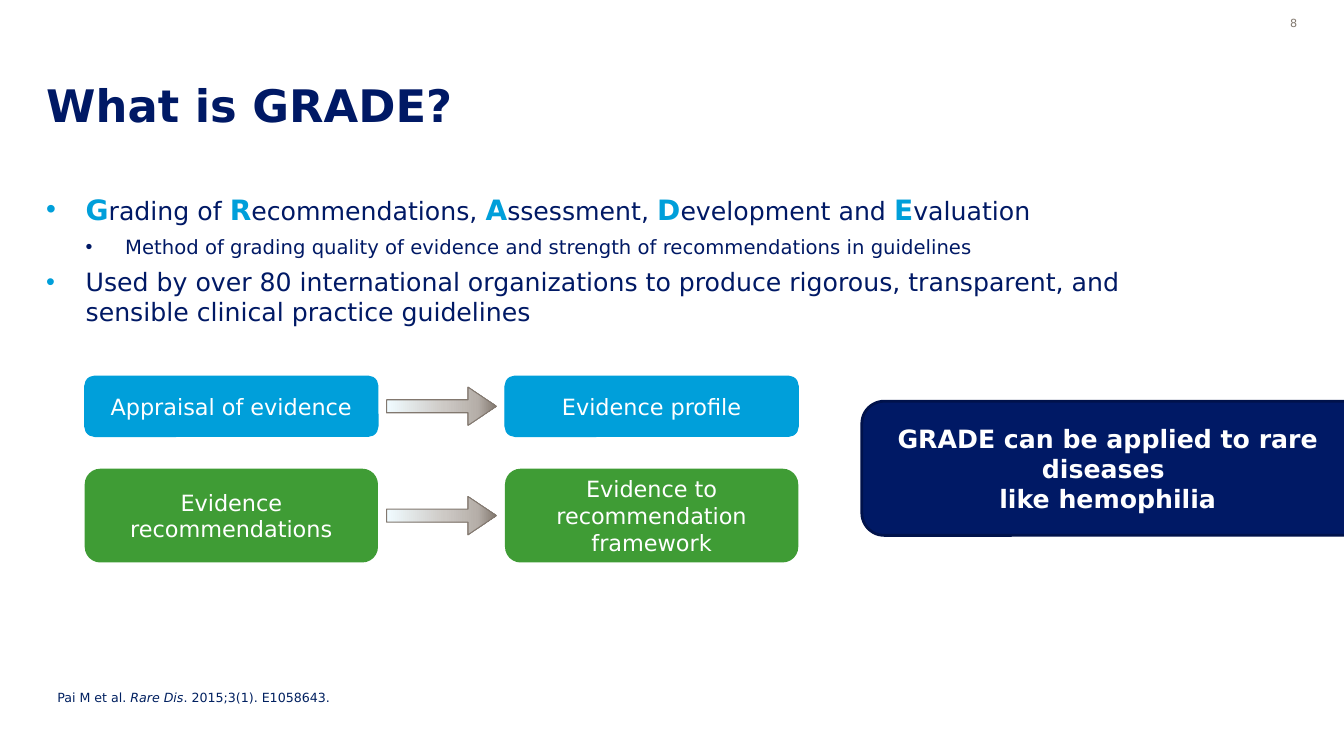
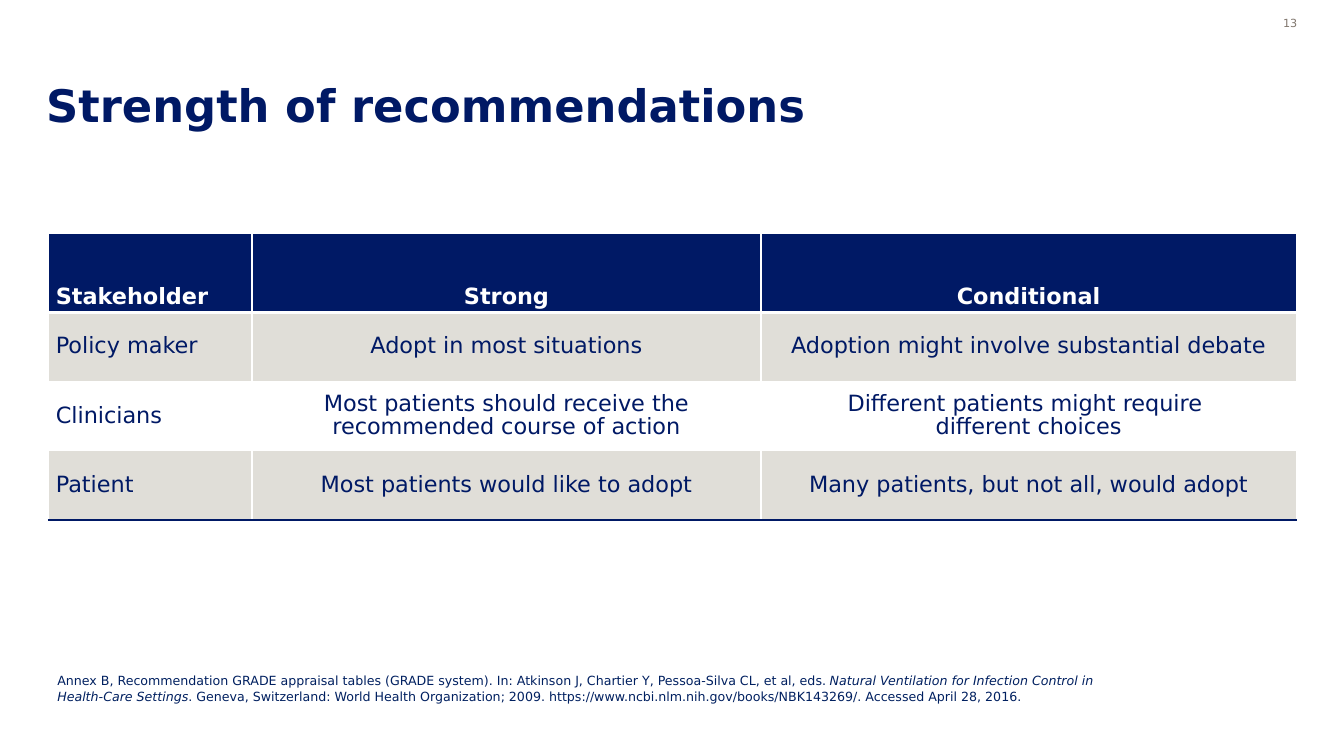
from dataclasses import dataclass

from lxml import etree
from pptx import Presentation, util as u
from pptx.dml.color import RGBColor
from pptx.enum import shapes as sh, text as tx
from pptx.oxml import ns


# Theme: colours and type sizes
@dataclass(frozen=True)
class Theme:
    font: str = "DejaVu Sans"
    navy: str = "001965"
    edge: str = "00124B"
    note: str = "002060"
    sky: str = "009FDA"
    green: str = "3F9C35"
    gray: str = "82786F"
    sand: str = "E0DED8"
    white: str = "FFFFFF"
    fade: tuple = ((0, "F0FBFF"), (53, "CDC9C5"), (83, "B5AEA8"), (100, "82786F"))
    head: int = 32
    big: int = 20
    body: int = 18
    cell: int = 16
    sub: int = 14
    small: int = 9
    tiny: int = 8


T = Theme()
LEFT, MID, RIGHT = tx.PP_ALIGN.LEFT, tx.PP_ALIGN.CENTER, tx.PP_ALIGN.RIGHT


# Text and XML helpers
def rgb(code):
    return RGBColor.from_string(code)


def write(par, words, size=T.body, color=T.navy, bold=False, italic=False,
          align=LEFT, before=0, lines=None):
    """Fill a paragraph; words is a string or a list of (string, format) runs."""
    par.alignment = align
    par.space_before = u.Pt(before)
    if lines:
        par.line_spacing = lines
    base = dict(size=size, color=color, bold=bold, italic=italic)
    for part, own in [(words, {})] if isinstance(words, str) else words:
        look = {**base, **own}
        for n, line in enumerate(part.split("\n")):
            if n:
                par.add_line_break()
            run = par.add_run()
            run.text = line
            font = run.font
            font.name, font.size = T.font, u.Pt(look["size"])
            font.bold, font.italic = look["bold"], look["italic"]
            font.color.rgb = rgb(look["color"])


def node(root, tag, **attrs):
    return etree.SubElement(root, ns.qn(tag), {k: str(v) for k, v in attrs.items()})


def bullet(par, color, left, hang):
    props = par._p.get_or_add_pPr()
    props.set("marL", str(u.Pt(left)))
    props.set("indent", str(-u.Pt(hang)))
    node(node(props, "a:buClr"), "a:srgbClr", val=color)
    node(props, "a:buFont", typeface="Arial")
    node(props, "a:buChar", char="•")


def border(cell, sides):
    """Draw (tag, colour, width) sides, which must precede the cell's fill."""
    props = cell._tc.get_or_add_tcPr()
    for n, (tag, color, width) in enumerate(sides):
        line = node(props, tag, w=u.Pt(width))
        node(node(line, "a:solidFill"), "a:srgbClr", val=color)
        props.insert(n, line)


def inset(frame, left=0, top=0, right=0, bottom=0):
    frame.margin_left, frame.margin_top = u.Pt(left), u.Pt(top)
    frame.margin_right, frame.margin_bottom = u.Pt(right), u.Pt(bottom)


class Deck:
    """Holds the style and the current slide."""

    def __init__(self):
        self.prs = Presentation()
        self.prs.slide_width, self.prs.slide_height = u.Pt(960), u.Pt(540)

    def start(self, title, page, layout):
        """Add a slide with its title and page number."""
        self.slide = self.prs.slides.add_slide(self.prs.slide_layouts[layout])
        frame = self.place(self.slide.shapes.title, 33, 54, 893.5, 41)
        frame.vertical_anchor = tx.MSO_ANCHOR.MIDDLE
        write(frame.paragraphs[0], title, size=T.head, bold=True)
        frame = self.label(894.25, 10.8, 32.4, 10.8)
        inset(frame)
        frame.vertical_anchor = tx.MSO_ANCHOR.MIDDLE
        write(frame.paragraphs[0], page, size=T.tiny, color=T.gray, align=RIGHT)

    def place(self, holder, x, y, w, h):
        holder.left, holder.top = u.Pt(x), u.Pt(y)
        holder.width, holder.height = u.Pt(w), u.Pt(h)
        frame = holder.text_frame
        frame.auto_size = tx.MSO_AUTO_SIZE.NONE
        inset(frame)
        return frame

    def label(self, x, y, w, h):
        box = self.slide.shapes.add_textbox(u.Pt(x), u.Pt(y), u.Pt(w), u.Pt(h))
        box.text_frame.word_wrap = True
        return box.text_frame

    def source(self, words, y, w, h):
        frame = self.label(33.85, y, w, h)
        frame.auto_size = tx.MSO_AUTO_SIZE.SHAPE_TO_FIT_TEXT
        write(frame.paragraphs[0], words, size=T.small, color=T.note)

    def points(self, items):
        """Fill the body placeholder with (level, words) bullets."""
        frame = self.place(self.slide.placeholders[1], 33, 137.5, 860.5, 310)
        frame.margin_right = u.Pt(17.3)
        for n, (level, words) in enumerate(items):
            par = frame.add_paragraph() if n else frame.paragraphs[0]
            par.level = level
            write(par, words, size=T.sub if level else T.body, before=6)
            bullet(par, T.navy if level else T.sky, 28.2 * (level + 1), 28.2)

    def shape(self, kind, x, y, w, h, edge=None, width=0.75):
        shape = self.slide.shapes.add_shape(kind, u.Pt(x), u.Pt(y), u.Pt(w), u.Pt(h))
        shape.shadow.inherit = False
        if edge:
            shape.line.color.rgb = rgb(edge)
            shape.line.width = u.Pt(width)
        else:
            shape.line.fill.background()
        return shape

    def box(self, words, x, y, w, h, fill, size=T.cell, bold=False, **line):
        shape = self.shape(sh.MSO_SHAPE.ROUNDED_RECTANGLE, x, y, w, h, **line)
        shape.fill.solid()
        shape.fill.fore_color.rgb = rgb(fill)
        frame = shape.text_frame
        frame.word_wrap = True
        frame.vertical_anchor = tx.MSO_ANCHOR.MIDDLE
        write(frame.paragraphs[0], words, size=size, color=T.white, bold=bold, align=MID)
        return frame

    def arrow(self, x, y, w, h):
        shape = self.shape(sh.MSO_SHAPE.RIGHT_ARROW, x, y, w, h, edge=T.gray)
        shape.adjustments[0], shape.adjustments[1] = 0.34, 0.74
        shape.fill.gradient()
        shape.fill.gradient_angle = 0
        stops = shape._element.spPr.find(".//" + ns.qn("a:gsLst"))
        for old in list(stops):
            stops.remove(old)
        for pos, color in T.fade:
            node(node(stops, "a:gs", pos=pos * 1000), "a:srgbClr", val=color)

    def table(self, rows, x, y, widths, heights):
        grid = self.slide.shapes.add_table(
            len(rows), len(widths), u.Pt(x), u.Pt(y),
            u.Pt(sum(widths)), u.Pt(sum(heights))).table
        for col, width in zip(grid.columns, widths):
            col.width = u.Pt(width)
        # Rules above, between and below the rows
        rules = [(T.white, 1), (T.white, 3), (T.white, 1), (T.white, 1), (T.navy, 1.5)]
        for r, row in enumerate(rows):
            grid.rows[r].height = u.Pt(heights[r])
            top = r == 0
            for c, words in enumerate(row):
                cell = grid.cell(r, c)
                inset(cell, 5.3, 2.65, 5.3, 2.65)
                cell.vertical_anchor = tx.MSO_ANCHOR.BOTTOM if top else tx.MSO_ANCHOR.MIDDLE
                if r % 2 or top:
                    cell.fill.solid()
                    cell.fill.fore_color.rgb = rgb(T.navy if top else T.sand)
                else:
                    cell.fill.background()
                border(cell, [("a:lnL", T.white, 1), ("a:lnR", T.white, 1),
                              ("a:lnT", *rules[r]), ("a:lnB", *rules[r + 1])])
                write(cell.text_frame.paragraphs[0], words, size=T.cell, bold=top,
                      color=T.white if top else T.navy,
                      align=MID if c else LEFT, lines=0.9)


def grade(deck):
    deck.start("What is GRADE?", "8", 1)
    deck.source([("Pai M et al. ", {}), ("Rare Dis", {"italic": True}),
                 (". 2015;3(1). E1058643.", {})], 489, 616, 18)

    # Bullets, with the initials picked out
    name = []
    mark = dict(size=T.big, color=T.sky, bold=True)
    for word in ("Grading of ", "Recommendations, ", "Assessment, ",
                 "Development and ", "Evaluation"):
        name += [(word[0], mark), (word[1:], {})]
    deck.points([
        (0, name),
        (1, "Method of grading quality of evidence and strength of "
            "recommendations in guidelines"),
        (0, "Used by over 80 international organizations to produce rigorous, "
            "transparent, and sensible clinical practice guidelines")])

    # Callout
    frame = deck.box("GRADE can be applied to rare diseases \nlike hemophilia",
                     615.6, 286.6, 387.4, 95.8, T.navy, size=T.body, bold=True,
                     edge=T.edge, width=2)
    frame.margin_right = u.Pt(43.2)

    # Two flows, each a pair of boxes with an arrow between
    left, wide, gap = 60.5, 209.5, 90.7
    long, thick = 78.5, 27.4
    for y, high, fill, edge, pair in (
            (268.6, 43.2, T.sky, T.sky, ("Appraisal of evidence", "Evidence profile")),
            (334.8, 67, T.green, None,
             ("Evidence recommendations", "Evidence to recommendation framework"))):
        for n, words in enumerate(pair):
            deck.box(words, left + n * (wide + gap), y, wide, high, fill, edge=edge)
        deck.arrow(left + wide + (gap - long) / 2, y + (high - thick) / 2, long, thick)


def strength(deck):
    deck.start("Strength of recommendations", "13", 5)
    deck.source([
        ("Annex B, Recommendation GRADE appraisal tables (GRADE system). In: "
         "Atkinson J, Chartier Y, Pessoa-Silva CL, et al, eds. ", {}),
        ("Natural Ventilation for Infection Control in Health-Care Settings",
         {"italic": True}),
        (". Geneva, Switzerland: World Health Organization; 2009. "
         "https://www.ncbi.nlm.nih.gov/books/NBK143269/. Accessed April 28, 2016.", {})],
        477.4, 783.4, 28.8)
    deck.table([
        ("Stakeholder", "Strong", "Conditional"),
        ("Policy maker", "Adopt in most situations",
         "Adoption might involve substantial debate"),
        ("Clinicians", "Most patients should receive the recommended course of action",
         "Different patients might require \ndifferent choices"),
        ("Patient", "Most patients would like to adopt",
         "Many patients, but not all, would adopt")],
        34.6, 167, (145.4, 363.6, 382.3), (56.2, 49.4, 49.4, 49.4))


def main():
    deck = Deck()
    grade(deck)
    strength(deck)
    deck.prs.save("out.pptx")


if __name__ == "__main__":
    main()
